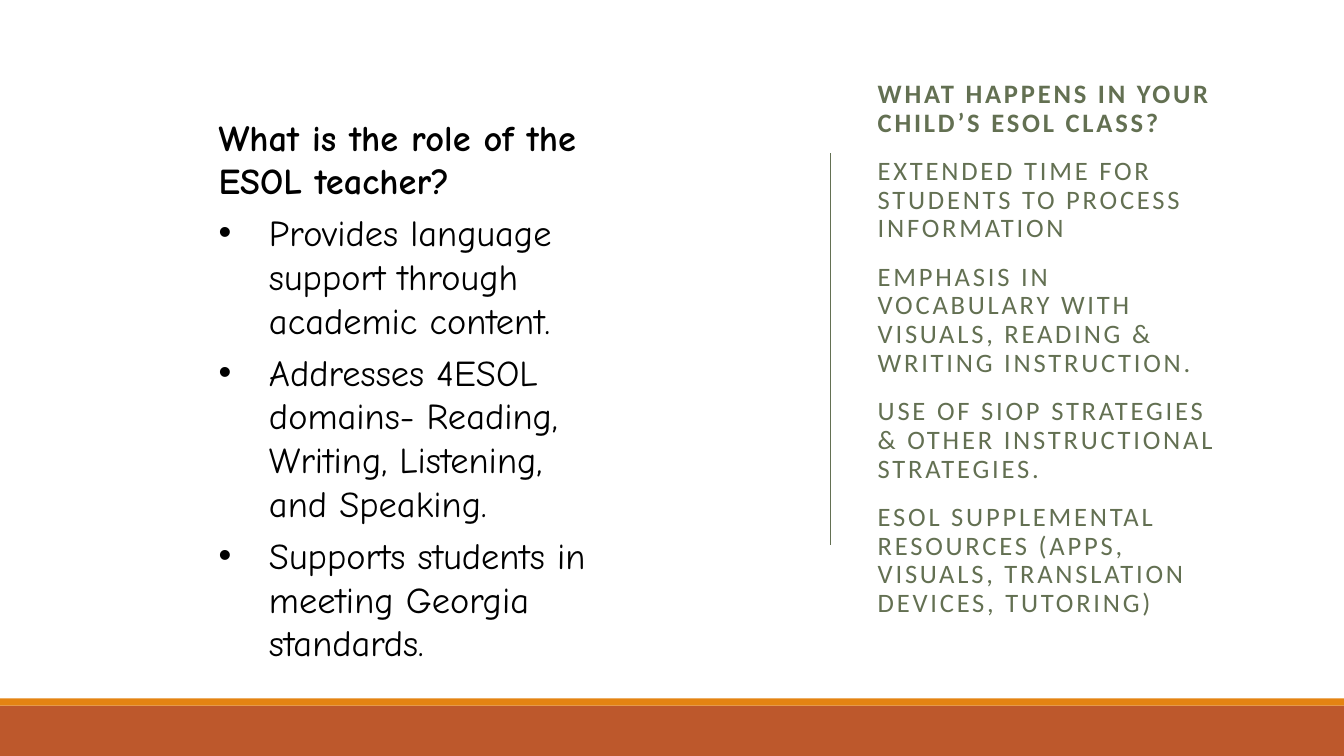
"""Build a slide on the ESOL teacher's role and what happens in class."""
from lxml.etree import SubElement
from pptx import Presentation
from pptx.dml.color import RGBColor
from pptx.enum.shapes import MSO_CONNECTOR, MSO_SHAPE
from pptx.enum.text import MSO_ANCHOR, MSO_AUTO_SIZE
from pptx.oxml.ns import qn
from pptx.util import Cm, Pt


def color(hex_string):
    """Return the colour for a hex string."""
    return RGBColor.from_string(hex_string)


def add_run(paragraph, text, font_name, size, hex_string, bold):
    """Add one styled run to a paragraph and return it."""
    run = paragraph.add_run()
    run.text = text
    run.font.name = font_name
    run.font.size = Pt(size)
    run.font.bold = bold
    run.font.color.rgb = color(hex_string)
    return run


GREEN = "637052"
CLASS_LINES = [
    "WHAT HAPPENS IN YOUR CHILD’S ESOL CLASS?",
    "EXTENDED TIME FOR STUDENTS TO PROCESS INFORMATION",
    "EMPHASIS IN VOCABULARY WITH VISUALS, READING & WRITING INSTRUCTION.",
    "USE OF SIOP STRATEGIES & OTHER INSTRUCTIONAL STRATEGIES.",
    "ESOL SUPPLEMENTAL RESOURCES (APPS, VISUALS, TRANSLATION DEVICES, TUTORING)",
]
ROLE_LINES = [
    "What is the role of the ESOL teacher?",
    "Provides language support through academic content.",
    "Addresses 4ESOL domains- Reading, Writing, Listening, and Speaking.",
    "Supports students in meeting Georgia standards.",
]

presentation = Presentation()
presentation.slide_width = Cm(33.87)
presentation.slide_height = Cm(19.05)
slide = presentation.slides.add_slide(presentation.slide_layouts[6])
slide.background.fill.solid()
slide.background.fill.fore_color.rgb = color("FFFFFF")

class_box = slide.shapes.add_textbox(Cm(21.87), Cm(1.78), Cm(9.27), Cm(14.05))
class_frame = class_box.text_frame
class_frame.word_wrap = True
class_frame.vertical_anchor = MSO_ANCHOR.MIDDLE
for index, text in enumerate(CLASS_LINES):
    paragraph = class_frame.add_paragraph() if index else class_frame.paragraphs[0]
    paragraph.line_spacing = 0.9
    paragraph.space_before = Pt(12)
    paragraph.space_after = Pt(2)
    run = add_run(paragraph, text, "Calibri", 19, GREEN, index == 0)
    run.font._element.set("spc", "200")

divider = slide.shapes.add_connector(
    MSO_CONNECTOR.STRAIGHT, Cm(20.93), Cm(3.86), Cm(20.93), Cm(13.74))
divider.line.color.rgb = color(GREEN)
divider.line.width = Pt(1)
SubElement(divider._element.spPr, qn("a:effectLst"))

for top, height, fill in [(17.78, 1.27, "BD582C"), (17.6, 0.18, "E48312")]:
    band = slide.shapes.add_shape(
        MSO_SHAPE.RECTANGLE, 0, Cm(top), presentation.slide_width, Cm(height))
    band.shadow.inherit = False
    band.fill.solid()
    band.fill.fore_color.rgb = color(fill)
    band.line.fill.background()

role_box = slide.shapes.add_textbox(Cm(5.26), Cm(2.77), Cm(10.03), Cm(14.22))
role_frame = role_box.text_frame
role_frame.word_wrap = True
role_frame.auto_size = MSO_AUTO_SIZE.SHAPE_TO_FIT_TEXT
for index, text in enumerate(ROLE_LINES):
    paragraph = role_frame.add_paragraph() if index else role_frame.paragraphs[0]
    paragraph.space_after = Pt(6)
    add_run(paragraph, text, "Comic Neue", 26, "000000", index == 0)
    if index:
        properties = paragraph._p.get_or_add_pPr()
        properties.set("marL", str(Cm(1.27)))
        properties.set("indent", str(-Cm(1.27)))
        SubElement(properties, qn("a:buFont"), typeface="Arial")
        SubElement(properties, qn("a:buChar"), char="•")

presentation.save("out.pptx")
